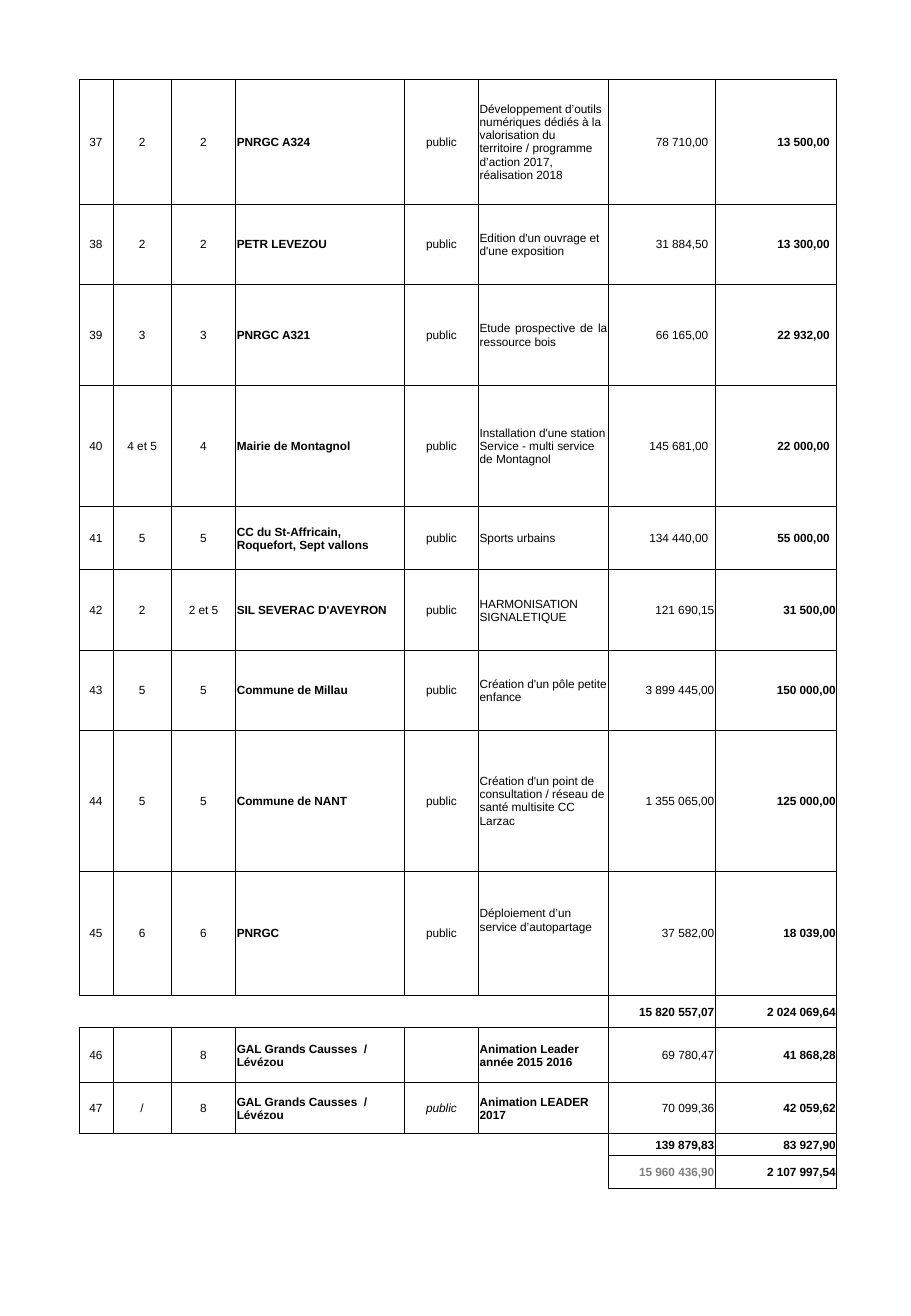
import pptx
import pptx.util
import pptx.dml.color
import pptx.enum.text
import pptx.oxml.ns
from lxml import etree

Inches = pptx.util.Inches
Pt = pptx.util.Pt
RGBColor = pptx.dml.color.RGBColor
ALIGN = pptx.enum.text.PP_ALIGN
qn = pptx.oxml.ns.qn

BLACK = RGBColor(0x00, 0x00, 0x00)
GREY = RGBColor(0x80, 0x80, 0x80)

# Content: number, two measures, applicant, status, project, cost, grant
PROJECTS = [
    ("37", "2", "2", "PNRGC A324", "public",
     "Développement d’outils numériques dédiés à la valorisation du territoire"
     " / programme d’action 2017, réalisation 2018", "78 710,00", "13 500,00"),
    ("38", "2", "2", "PETR LEVEZOU", "public",
     "Edition d'un ouvrage et d'une exposition", "31 884,50", "13 300,00"),
    ("39", "3", "3", "PNRGC A321", "public",
     "Etude prospective de la ressource bois", "66 165,00", "22 932,00"),
    ("40", "4 et 5", "4", "Mairie de Montagnol", "public",
     "Installation d'une station Service - multi service de Montagnol",
     "145 681,00", "22 000,00"),
    ("41", "5", "5", "CC du St-Affricain, Roquefort, Sept vallons", "public",
     "Sports urbains", "134 440,00", "55 000,00"),
    ("42", "2", "2 et 5", "SIL SEVERAC D'AVEYRON", "public",
     "HARMONISATION SIGNALETIQUE", "121 690,15", "31 500,00"),
    ("43", "5", "5", "Commune de Millau", "public",
     "Création d'un pôle petite enfance", "3 899 445,00", "150 000,00"),
    ("44", "5", "5", "Commune de NANT", "public",
     "Création d'un point de consultation / réseau de santé multisite CC Larzac",
     "1 355 065,00", "125 000,00"),
    ("45", "6", "6", "PNRGC", "public",
     "Déploiement d’un service d’autopartage", "37 582,00", "18 039,00"),
]
ANIMATIONS = [
    ("46", "", "8", "GAL Grands Causses  / Lévézou", "",
     "Animation Leader année 2015 2016", "69 780,47", "41 868,28"),
    ("47", "/", "8", "GAL Grands Causses  / Lévézou", "public",
     "Animation LEADER 2017", "70 099,36", "42 059,62"),
]
BLANKS = ("",) * 6
PROJECT_TOTAL = BLANKS + ("15 820 557,07", "2 024 069,64")
ANIMATION_TOTAL = BLANKS + ("139 879,83", "83 927,90")
GRAND_TOTAL = BLANKS + ("15 960 436,90", "2 107 997,54")
ROWS = PROJECTS + [PROJECT_TOTAL] + ANIMATIONS + [ANIMATION_TOTAL, GRAND_TOTAL]

COLUMN_WIDTHS = [0.28, 0.48, 0.53, 1.39, 0.61, 1.07, 0.88, 1]
ROW_HEIGHTS = [1.03, 0.66, 0.83, 1, 0.52, 0.66, 0.66, 1.16, 1.02,
               0.27, 0.45, 0.42, 0.18, 0.27]
APPLICANT, STATUS, PROJECT, COST, GRANT = range(3, 8)
COLUMN_ALIGN = [ALIGN.CENTER] * 3 + [ALIGN.LEFT, ALIGN.CENTER, ALIGN.LEFT,
                                     ALIGN.RIGHT, ALIGN.RIGHT]
INSET = 0.01
INDENTED_AMOUNTS = {"37", "38", "39", "40", "41"}


def is_framed(row, column):
    """Every cell is framed except the blanks beside the totals."""
    if not (0 <= row < len(ROWS) and 0 <= column < len(COLUMN_WIDTHS)):
        return False
    return column >= COST or ROWS[row][0] != ""


def draw_borders(cell, row, column):
    """An edge shows when a framed cell lies on either side of it."""
    properties = cell._tc.get_or_add_tcPr()
    for edge, down, right in (("a:lnL", 0, -1), ("a:lnR", 0, 1),
                              ("a:lnT", -1, 0), ("a:lnB", 1, 0)):
        line = etree.SubElement(properties, qn(edge), w=str(Pt(0.5)))
        if is_framed(row, column) or is_framed(row + down, column + right):
            fill = etree.SubElement(line, qn("a:solidFill"))
            etree.SubElement(fill, qn("a:srgbClr"), val=str(BLACK))
        else:
            etree.SubElement(line, qn("a:noFill"))


def write_cell(cell, entry, column):
    number, text = entry[0], entry[column]
    cell.vertical_anchor = pptx.enum.text.MSO_ANCHOR.MIDDLE
    cell.margin_left = cell.margin_right = cell.margin_top = Inches(INSET)
    cell.margin_bottom = 0
    if column >= COST and number in INDENTED_AMOUNTS:
        cell.margin_right = Inches(0.06)
    if column == PROJECT and number == "45":
        cell.margin_bottom = Inches(0.22)

    cell.text_frame.text = text
    paragraph = cell.text_frame.paragraphs[0]
    paragraph.alignment = COLUMN_ALIGN[column]
    if column == PROJECT and number == "39":
        paragraph.alignment = ALIGN.JUSTIFY
    if not text:
        etree.SubElement(paragraph._p, qn("a:endParaRPr"), sz="700")
    for run in paragraph.runs:
        run.font.name = "Arial"
        run.font.size = Pt(7)
        run.font.bold = (column in (APPLICANT, GRANT) or number == ""
                         or (column == PROJECT and entry in ANIMATIONS))
        run.font.italic = column == STATUS and number == "47"
        grand_cost = entry is GRAND_TOTAL and column == COST
        run.font.color.rgb = GREY if grand_cost else BLACK


# Slide
deck = pptx.Presentation()
deck.slide_width, deck.slide_height = Inches(7.5), Inches(10.83)
slide = deck.slides.add_slide(deck.slide_layouts[6])

# Funding table
funding = slide.shapes.add_table(
    len(ROWS), len(COLUMN_WIDTHS), Inches(0.65), Inches(0.65),
    Inches(sum(COLUMN_WIDTHS)), Inches(sum(ROW_HEIGHTS))).table
funding.first_row = funding.horz_banding = False
for table_column, width in zip(funding.columns, COLUMN_WIDTHS):
    table_column.width = Inches(width)
for table_row, height in zip(funding.rows, ROW_HEIGHTS):
    table_row.height = Inches(height)

for row, entry in enumerate(ROWS):
    for column in range(len(COLUMN_WIDTHS)):
        cell = funding.cell(row, column)
        write_cell(cell, entry, column)
        draw_borders(cell, row, column)
        cell.fill.background()

deck.save("out.pptx")
